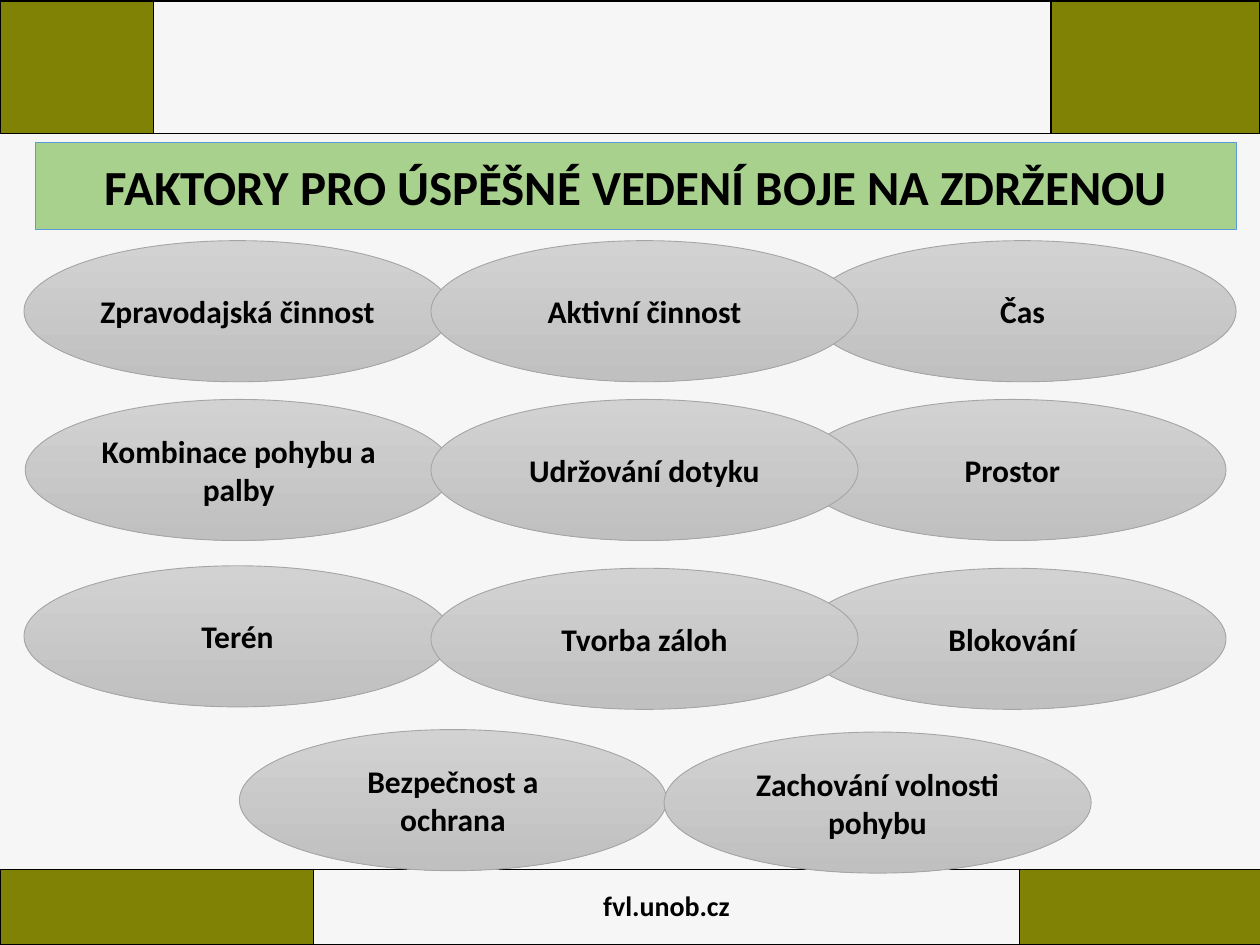
from lxml import etree
from pptx import Presentation
from pptx.dml.color import RGBColor
from pptx.enum.shapes import MSO_SHAPE
from pptx.enum.text import MSO_ANCHOR, MSO_AUTO_SIZE, PP_ALIGN
from pptx.oxml.ns import qn
from pptx.util import Inches, Pt

ELLIPSE = MSO_SHAPE.OVAL
MIDDLE = MSO_ANCHOR.MIDDLE
CENTER = PP_ALIGN.CENTER
NO_AUTOFIT = MSO_AUTO_SIZE.NONE
TITLE_ONLY = 5

COLORS = {
    "page": "F6F6F6",
    "olive": "808206",
    "title": "A9D18E",
    "title_line": "5B9BD5",
    "ellipse_top": "D2D2D2",
    "ellipse_bottom": "C0C0C0",
    "ellipse_line": "A5A5A5",
    "black": "000000",
}


def rgb(name):
    return RGBColor.from_string(COLORS[name])


def write_centred(holder, text, size):
    """Fill a shape or table cell with bold black text, centred both ways."""
    holder.text_frame.text = text
    holder.vertical_anchor = MIDDLE
    holder.text_frame.vertical_anchor = MIDDLE
    para = holder.text_frame.paragraphs[0]
    para.alignment = CENTER
    font = para.runs[0].font
    font.name = "Calibri"
    font.size = Pt(size)
    font.bold = True
    font.color.rgb = rgb("black")


deck = Presentation()
deck.slide_width = Inches(10)
deck.slide_height = Inches(7.5)
page = deck.slides.add_slide(deck.slide_layouts[TITLE_ONLY])
page.background.fill.solid()
page.background.fill.fore_color.rgb = rgb("page")

# Title
title = page.shapes.title
title.left, title.top = Inches(0.28), Inches(1.13)
title.width, title.height = Inches(9.53), Inches(0.69)
title.fill.solid()
title.fill.fore_color.rgb = rgb("title")
title.line.color.rgb = rgb("title_line")
title.line.width = Pt(0.5)
write_centred(title, "FAKTORY PRO ÚSPĚŠNÉ VEDENÍ BOJE NA ZDRŽENOU", 28)
title.text_frame.auto_size = NO_AUTOFIT

# Footer and header bands: olive ends around a clear middle cell
bands = [
    (6.9, 0.6, (2.49, 5.6, 1.92), "fvl.unob.cz"),
    (0.01, 1.05, (1.22, 7.12, 1.66), ""),
]
for top, height, widths, label in bands:
    frame = page.shapes.add_table(
        1, 3, Inches(0), Inches(top), Inches(sum(widths)), Inches(height))
    table = frame.table
    table.first_row = False
    table.horz_banding = False
    for column, width in zip(table.columns, widths):
        column.width = Inches(width)
    for index, cell in enumerate(table.rows[0].cells):
        if index == 1:
            cell.fill.background()
        else:
            cell.fill.solid()
            cell.fill.fore_color.rgb = rgb("olive")
        properties = cell._tc.get_or_add_tcPr()
        for position, side in enumerate(("a:lnL", "a:lnR", "a:lnT", "a:lnB")):
            border = etree.Element(qn(side), w=str(Pt(1)))
            fill = etree.SubElement(border, qn("a:solidFill"))
            etree.SubElement(fill, qn("a:srgbClr"), val=COLORS["black"])
            properties.insert(position, border)
    if label:
        cell = table.cell(0, 1)
        cell.text_frame.text = label
        cell.vertical_anchor = MIDDLE
        write_centred(cell, label, 16)

# Factors; the middle column comes last of the three, to lie on top
factors = [
    (0.19, 1.91, "Zpravodajská činnost"),
    (0.19, 4.49, "Terén"),
    (0.2, 3.17, "Kombinace pohybu a palby"),
    (6.34, 4.51, "Blokování"),
    (6.34, 3.17, "Prostor"),
    (6.42, 1.91, "Čas"),
    (3.42, 1.91, "Aktivní činnost"),
    (3.42, 3.17, "Udržování dotyku"),
    (3.42, 4.51, "Tvorba záloh"),
    (1.9, 5.79, "Bezpečnost a ochrana"),
    (5.27, 5.81, "Zachování volnosti pohybu"),
]
for left, top, label in factors:
    ellipse = page.shapes.add_shape(
        ELLIPSE, Inches(left), Inches(top), Inches(3.39), Inches(1.12))
    ellipse.shadow.inherit = False
    ellipse.fill.gradient()
    ellipse.fill.gradient_angle = 270
    for stop, name in zip(ellipse.fill.gradient_stops,
                          ("ellipse_top", "ellipse_bottom")):
        stop.color.rgb = rgb(name)
    ellipse.line.color.rgb = rgb("ellipse_line")
    ellipse.line.width = Pt(0.5)
    ellipse.text_frame.word_wrap = True
    write_centred(ellipse, label, 18)

deck.save("out.pptx")
